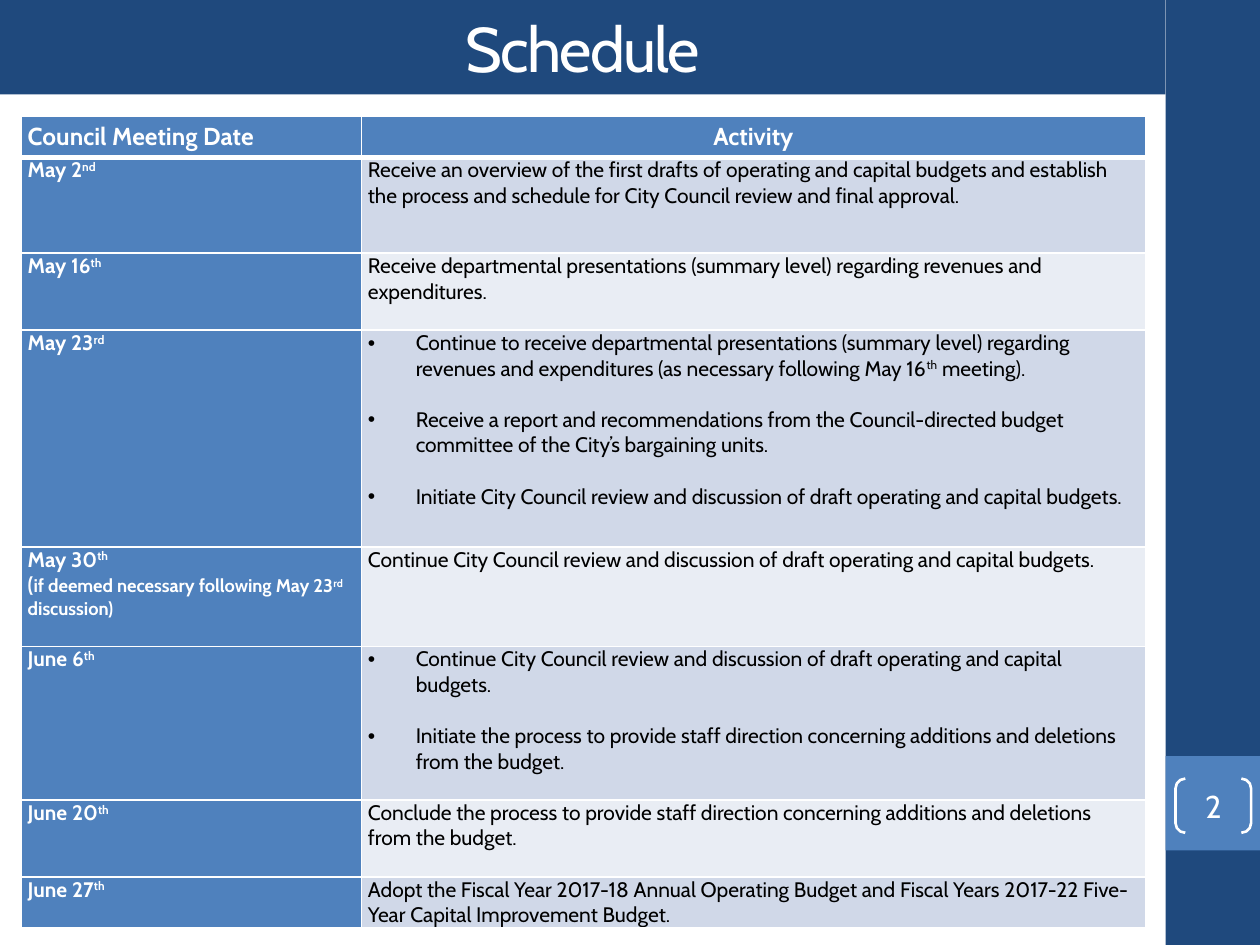
from lxml import etree
from pptx import Presentation
from pptx.dml.color import RGBColor
from pptx.enum.shapes import MSO_SHAPE as Shape
from pptx.enum.text import MSO_ANCHOR as Anchor, PP_ALIGN as Align
from pptx.oxml.ns import qn
from pptx.util import Inches, Pt

NAVY, BLUE, WHITE, BLACK = "1F497D", "4F81BD", "FFFFFF", "000000"
BANDS = ("D0D8E8", "E9EDF4")
FONT = "Cabin"
BULLET_INDENT = Inches(0.38)

# Row height, date, activities; several activities become bullets.
# Text between carets is superscript.
SCHEDULE = [
    (0.76, "May 2^nd^", [
        "Receive an overview of the first drafts of operating and capital budgets "
        "and establish the process and schedule for City Council review and final approval."]),
    (0.61, "May 16^th^", [
        "Receive departmental presentations (summary level) regarding revenues and expenditures."]),
    (1.72, "May 23^rd^", [
        "Continue to receive departmental presentations (summary level) regarding "
        "revenues and expenditures (as necessary following May 16^th^ meeting).",
        "Receive a report and recommendations from the Council-directed budget "
        "committee of the City’s bargaining units.",
        "Initiate City Council review and discussion of draft operating and capital budgets."]),
    (0.79, "May 30^th^", [
        "Continue City Council review and discussion of draft operating and capital budgets."]),
    (1.22, "June 6^th^", [
        "Continue City Council review and discussion of draft operating and capital budgets.",
        "Initiate the process to provide staff direction concerning additions "
        "and deletions from the budget."]),
    (0.61, "June 20^th^", [
        "Conclude the process to provide staff direction concerning additions "
        "and deletions from the budget."]),
    (0.4, "June 27^th^", [
        "Adopt the Fiscal Year 2017-18 Annual Operating Budget and Fiscal Years "
        "2017-22 Five-Year Capital Improvement Budget."]),
]
DATE_NOTES = {"May 30^th^": "if deemed necessary following May 23^rd^ discussion)"}


def rgb(value):
    return RGBColor.from_string(value)


def add_text(para, text, size, color, bold=False):
    """Add runs to para, raising the parts between carets."""
    for index, part in enumerate(text.split("^")):
        if not part:
            continue
        span = para.add_run()
        span.text = part
        span.font.name = FONT
        span.font.size = Pt(size)
        span.font.bold = bold
        span.font.color.rgb = rgb(color)
        if index % 2:
            span.font._element.set("baseline", "30000")
    return para


def add_panel(page, left, top, width, height, fill=None, kind=Shape.RECTANGLE):
    panel = page.shapes.add_shape(
        kind, Inches(left), Inches(top), Inches(width), Inches(height))
    panel.shadow.inherit = False
    panel.line.fill.background()
    if fill:
        panel.fill.solid()
        panel.fill.fore_color.rgb = rgb(fill)
    else:
        panel.fill.background()
    return panel


def add_label(panel, text, size):
    frame = panel.text_frame
    frame.vertical_anchor = Anchor.MIDDLE
    para = frame.paragraphs[0]
    para.alignment = Align.CENTER
    add_text(para, text, size, WHITE)
    return para


def add_title(page, left, top, width, height):
    para = add_label(add_panel(page, left, top, width, height, NAVY), "Schedule", 36)
    para.runs[0].font._element.set("spc", "-100")


def add_sidebar(page, left, top, width, height):
    add_panel(page, left, top, width, height, NAVY)
    add_panel(page, left, top + 6, width, 0.75, BLUE)
    bracket = add_panel(page, left + 0.08, top + 6.18, 0.6, 0.43, kind=Shape.DOUBLE_BRACKET)
    bracket.adjustments[0] = 0.18
    bracket.line.color.rgb = rgb(WHITE)
    bracket.line.width = Pt(1.5)
    frame = bracket.text_frame
    frame.margin_left = frame.margin_right = frame.margin_top = frame.margin_bottom = 0
    add_label(bracket, "2", 18)


def style_cell(cell, fill, bottom=1, anchor=Anchor.TOP):
    """Set margins, white borders and fill; bottom is a width in points."""
    cell.margin_left = cell.margin_right = Inches(0.05)
    cell.margin_top = cell.margin_bottom = 0
    cell.vertical_anchor = anchor
    properties = cell._tc.get_or_add_tcPr()
    for side, width in (("L", 1), ("R", 1), ("T", 1), ("B", bottom)):
        line = etree.SubElement(properties, qn(f"a:ln{side}"), w=str(Pt(width)))
        solid = etree.SubElement(line, qn("a:solidFill"))
        etree.SubElement(solid, qn("a:srgbClr"), val=WHITE)
    cell.fill.solid()
    cell.fill.fore_color.rgb = rgb(fill)


def make_bullet(para):
    properties = para._p.get_or_add_pPr()
    properties.set("marL", str(BULLET_INDENT))
    properties.set("indent", str(-BULLET_INDENT))
    etree.SubElement(properties, qn("a:buFont"), typeface="Arial")
    etree.SubElement(properties, qn("a:buChar"), char="•")


def fill_date(cell, date):
    style_cell(cell, BLUE)
    frame = cell.text_frame
    add_text(frame.paragraphs[0], date, 12, WHITE, True)
    if date in DATE_NOTES:
        note = frame.add_paragraph()
        add_text(note, "(", 12, WHITE, True)
        add_text(note, DATE_NOTES[date], 10.5, WHITE, True)


def fill_activities(cell, activities, fill):
    style_cell(cell, fill)
    frame = cell.text_frame
    for index, activity in enumerate(activities):
        para = frame.add_paragraph() if index else frame.paragraphs[0]
        if index:
            para.space_before = Pt(14.6)
        if len(activities) > 1:
            make_bullet(para)
        add_text(para, activity, 12, BLACK)


def add_schedule(page, left, top, width, date_width):
    heights = [0.33] + [row[0] for row in SCHEDULE]
    table = page.shapes.add_table(
        len(heights), 2, Inches(left), Inches(top), Inches(width), Inches(sum(heights))).table
    table.columns[0].width = Inches(date_width)
    table.columns[1].width = Inches(width - date_width)
    for row, height in zip(table.rows, heights):
        row.height = Inches(height)
    headings = (("Council Meeting Date", Align.LEFT), ("Activity", Align.CENTER))
    for column, (heading, alignment) in enumerate(headings):
        cell = table.cell(0, column)
        style_cell(cell, BLUE, bottom=3, anchor=Anchor.MIDDLE)
        para = cell.text_frame.paragraphs[0]
        para.alignment = alignment
        add_text(para, heading, 14, WHITE, True)
    for index, (_, date, activities) in enumerate(SCHEDULE):
        fill_date(table.cell(index + 1, 0), date)
        fill_activities(table.cell(index + 1, 1), activities, BANDS[index % 2])


def main():
    deck = Presentation()
    deck.slide_width, deck.slide_height = Inches(10), Inches(7.5)
    page = deck.slides.add_slide(deck.slide_layouts[6])
    add_sidebar(page, 9.25, 0, 0.75, 7.5)
    add_title(page, 0, 0, 9.25, 0.75)
    add_schedule(page, 0.17, 0.92, 8.92, 2.7)
    deck.save("out.pptx")


if __name__ == "__main__":
    main()
